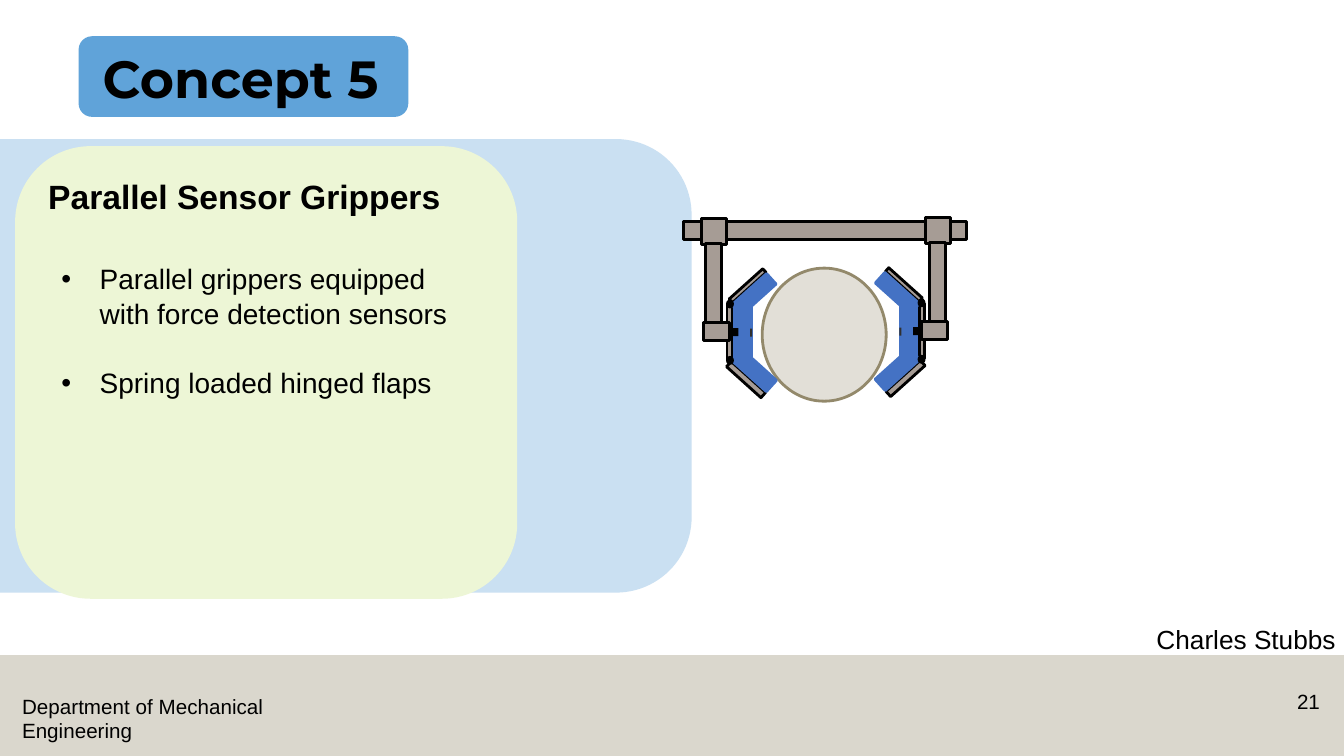
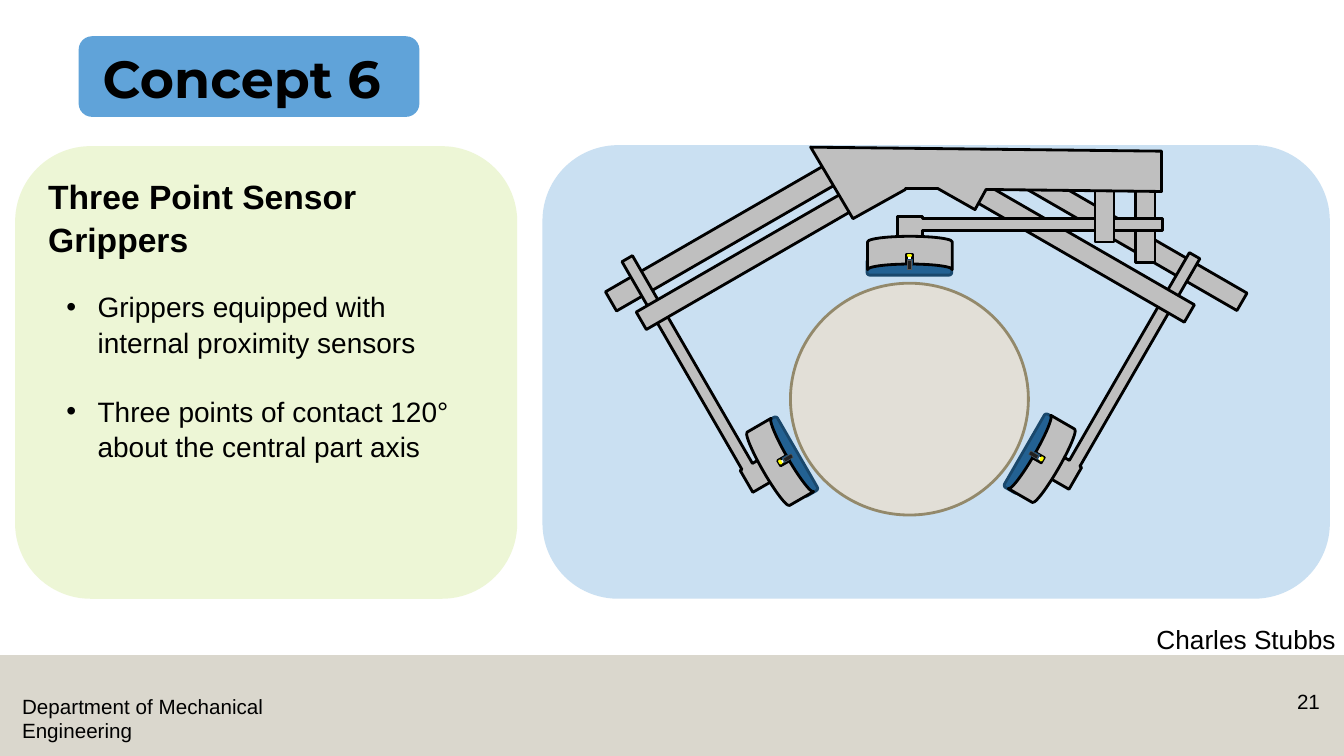
import math
from dataclasses import dataclass, replace
from typing import NamedTuple, Optional, Sequence

from lxml import etree
from pptx import Presentation
from pptx import util as u
from pptx.dml.color import RGBColor
from pptx.enum import shapes, text
from pptx.oxml.ns import qn

PX = 9144  # EMU in one px (100 px to the inch)
RECT = shapes.MSO_SHAPE.RECTANGLE
ROUND = shapes.MSO_SHAPE.ROUNDED_RECTANGLE
OVAL = shapes.MSO_SHAPE.OVAL
SHELL = shapes.MSO_SHAPE.FLOWCHART_STORED_DATA


class Finish(NamedTuple):
    fill: str
    line: Optional[str] = None
    weight: float = 2


@dataclass(frozen=True)
class Theme:
    body_font: str = "Arial"
    title_font: str = "Montserrat"
    ink: str = "000000"
    title_size: float = 37.3
    heading_size: float = 24
    body_size: float = 20
    name_size: float = 18.7
    small_size: float = 14.7
    leading: float = 1.05
    band: Finish = Finish("B7B09C")
    title_pill: Finish = Finish("60A3D9")
    blue_panel: Finish = Finish("CAE0F2")
    green_panel: Finish = Finish("EDF6D6")
    steel: Finish = Finish("A69C95", "000000")
    grey: Finish = Finish("BFBFBF", "000000")
    pad: Finish = Finish("4472C4", "4472C4")
    black: Finish = Finish("000000")
    hinge: Finish = Finish("000000", "000000")
    slot: Finish = Finish("303030")
    workpiece: Finish = Finish("E2DFD7", "93896B")
    cushion: Finish = Finish("236192", "1A486C")
    housing: Finish = Finish("FFFFFF", "000000")
    core: Finish = Finish("236192", "1A486C", 0.5)
    stem: Finish = Finish("202020", "595959", 0.25)
    lamp: Finish = Finish("FFFF00", "FFFF00", 1.5)


T = Theme()


@dataclass(frozen=True)
class Part:
    """A preset shape: frame before rotation, in px."""
    x: float
    y: float
    w: int
    h: int
    finish: Finish
    rot: float = 0
    kind: int = RECT


@dataclass(frozen=True)
class Jaw:
    """A contact jaw placed by the centre of its cushion."""
    x: int
    y: int
    turn: int = 0
    mirrored: bool = False


@dataclass(frozen=True)
class Concept:
    title: str
    pill_w: int
    panel_x: int
    panel_y: int
    heading: str
    bullets: Sequence[str]
    bullets_x: int
    bullets_y: int
    indent: int


# ---- drawing helpers ----
def emu(px: float) -> int:
    return round(px * PX)


def paint(sp, finish: Finish) -> None:
    sp.shadow.inherit = False
    sp.fill.solid()
    sp.fill.fore_color.rgb = RGBColor.from_string(finish.fill)
    if finish.line:
        sp.line.color.rgb = RGBColor.from_string(finish.line)
        sp.line.width = u.Pt(finish.weight)
    else:
        sp.line.fill.background()


def draw(s, part: Part):
    sp = s.shapes.add_shape(part.kind, emu(part.x), emu(part.y), emu(part.w), emu(part.h))
    sp.rotation = part.rot % 360
    paint(sp, part.finish)
    return sp


def draw_all(s, parts: Sequence[Part]) -> None:
    for part in parts:
        draw(s, part)


def outline(s, points: Sequence[tuple], finish: Finish) -> None:
    pts = [(emu(x), emu(y)) for x, y in points]
    builder = s.shapes.build_freeform(*pts[0], scale=1.0)
    builder.add_line_segments(pts[1:], close=True)
    paint(builder.convert_to_shape(), finish)


def write(s, x: int, y: int, w: int, h: int, lines: Sequence[str], size: float,
          bold: bool = False, font: str = T.body_font, align=text.PP_ALIGN.LEFT,
          anchor=text.MSO_ANCHOR.TOP, inset: tuple = (10, 5),
          leading: Optional[float] = None, indent: int = 0) -> None:
    tf = s.shapes.add_textbox(emu(x), emu(y), emu(w), emu(h)).text_frame
    tf.word_wrap = True
    tf.vertical_anchor = anchor
    tf.margin_left = tf.margin_right = emu(inset[0])
    tf.margin_top = tf.margin_bottom = emu(inset[1])
    for i, line in enumerate(lines):
        p = tf.add_paragraph() if i else tf.paragraphs[0]
        p.text = line
        p.alignment = align
        if leading:
            p.line_spacing = leading
        if i:
            p.space_before = u.Pt(24)
        if indent:
            pPr = p._p.get_or_add_pPr()
            pPr.set("marL", str(emu(indent)))
            pPr.set("indent", str(-emu(indent)))
            etree.SubElement(pPr, qn("a:buFont")).set("typeface", T.body_font)
            etree.SubElement(pPr, qn("a:buChar")).set("char", "•")
        for r in p.runs:
            r.font.name, r.font.size, r.font.bold = font, u.Pt(size), bold
            r.font.color.rgb = RGBColor.from_string(T.ink)


# ---- shared slide frame ----
def add_frame(prs, c: Concept):
    s = prs.slides.add_slide(prs.slide_layouts[6])
    band = draw(s, Part(0, 650, 1333, 100, T.band))
    colour = band.fill._xPr.find(qn("a:solidFill"))[0]
    etree.SubElement(colour, qn("a:alpha")).set("val", "50000")
    write(s, 12, 683, 359, 59, ["Department of Mechanical Engineering"], T.small_size)
    draw(s, Part(78, 36, c.pill_w, 80, T.title_pill, kind=ROUND))
    draw(s, Part(c.panel_x, c.panel_y, 781, 450, T.blue_panel, kind=ROUND))
    write(s, 92, 5, 334, 109, [c.title], T.title_size, True, T.title_font,
          anchor=text.MSO_ANCHOR.BOTTOM, leading=0.9)
    write(s, 1242, 679, 77, 40, ["21"], T.small_size, align=text.PP_ALIGN.RIGHT)
    write(s, 1134, 605, 216, 58, ["Charles Stubbs"], T.name_size, inset=(13, 13))
    return s


def add_description(s, c: Concept) -> None:
    draw(s, Part(15, 145, 498, 449, T.green_panel, kind=ROUND))
    write(s, 38, 168, 459, 91, [c.heading], T.heading_size, True, leading=T.leading)
    write(s, c.bullets_x, c.bullets_y, 423, 239, c.bullets, T.body_size,
          leading=T.leading, indent=c.indent)


# ---- parallel gripper: right half, mirrored to the left ----
AXIS = 819
FINGER = [
    Part(875, 319, 55, 20, T.pad, 90),
    Part(887, 326, 55, 5, T.steel, 90),
    Part(905, 325, 8, 7, T.black, 90),
    Part(874, 280, 45, 5, T.steel, 42),
    Part(875, 372, 46, 7, T.steel, 138),
    Part(867, 284, 46, 14, T.pad, 42),
    Part(867, 359, 46, 15, T.pad, 138),
    Part(911, 354, 6, 5, T.hinge, 90, OVAL),
    Part(911, 298, 6, 5, T.hinge, 90, OVAL),
    Part(889, 328, 8, 2, T.slot, 90),
]
ARM = [
    Part(917, 216, 26, 25, T.steel, 90),
    Part(922, 241, 16, 96, T.steel),
    Part(918, 315, 18, 26, T.steel, 90),
]


def mirror(parts: Sequence[Part]) -> list:
    return [replace(a, x=2 * AXIS - a.x - a.w, y=a.y + 1, rot=-a.rot) for a in parts]


def add_parallel_gripper(s) -> None:
    draw_all(s, FINGER)
    draw(s, Part(809, 88, 18, 281, T.steel, 90))
    draw(s, Part(756, 266, 123, 132, T.workpiece, kind=OVAL))
    draw_all(s, mirror(FINGER))
    draw_all(s, ARM)
    draw_all(s, mirror(ARM))


# ---- three point gripper: one jaw, turned about its cushion ----
ROD = [(-12, -50), (13, -50), (13, -48), (251, -48),
       (251, -36), (13, -36), (13, -29), (-12, -29)]
JAW = [
    Part(-42, -8, 84, 16, T.cushion, kind=ROUND),
    Part(-16, -56, 33, 84, T.grey, 90, SHELL),
    Part(-3, -13, 6, 10, T.housing),
    Part(-2, -8, 5, 6, T.core),
    Part(-2, -7, 4, 9, T.stem),
    Part(-1, -12, 3, 1, T.lamp),
]
HUB = [(804, 146), (1152, 150), (1152, 190), (978, 188), (967, 208),
       (930, 187), (898, 187), (898, 188), (846, 217)]


def add_jaw(s, jaw: Jaw) -> None:
    cos, sin = math.cos(math.radians(jaw.turn)), math.sin(math.radians(jaw.turn))
    side = -1 if jaw.mirrored else 1

    def place(x: float, y: float) -> tuple:
        return jaw.x + side * (x * cos - y * sin), jaw.y + x * sin + y * cos

    outline(s, [place(x, y) for x, y in ROD], T.grey)
    for a in JAW:
        cx, cy = place(a.x + a.w / 2, a.y + a.h / 2)
        rot = a.rot + jaw.turn
        draw(s, replace(a, x=cx - a.w / 2, y=cy - a.h / 2,
                        rot=180 - rot if jaw.mirrored else rot))


def add_three_point_gripper(s) -> None:
    draw(s, Part(588, 221, 268, 22, T.grey, 150))
    draw(s, Part(784, 281, 236, 230, T.workpiece, kind=OVAL))
    draw(s, Part(965, 218, 286, 20, T.grey, 30))
    add_jaw(s, Jaw(1023, 450, 240, True))
    draw(s, Part(952, 240, 244, 20, T.grey, 30))
    draw(s, Part(1088, 203, 96, 19, T.grey, 270))
    add_jaw(s, Jaw(902, 265))
    draw(s, Part(1058, 193, 75, 19, T.grey, 270))
    add_jaw(s, Jaw(784, 453, 240))
    draw(s, Part(619, 245, 253, 20, T.grey, 150))
    outline(s, HUB, T.grey)


SLIDES = [
    (Concept("Concept 5", 327, -95, 138, "Parallel Sensor Grippers",
             ["Parallel grippers equipped with force detection sensors",
              "Spring loaded hinged flaps"], 51, 253, 38), add_parallel_gripper),
    (Concept("Concept 6", 338, 538, 144, "Three Point Sensor Grippers",
             ["Grippers equipped with internal proximity sensors",
              "Three points of contact 120° about the central part axis"], 56, 281, 31),
     add_three_point_gripper),
]


def main() -> None:
    prs = Presentation()
    prs.slide_width, prs.slide_height = emu(1333), emu(750)
    for concept, add_gripper in SLIDES:
        s = add_frame(prs, concept)
        add_gripper(s)
        add_description(s, concept)
    prs.save("out.pptx")


if __name__ == "__main__":
    main()
